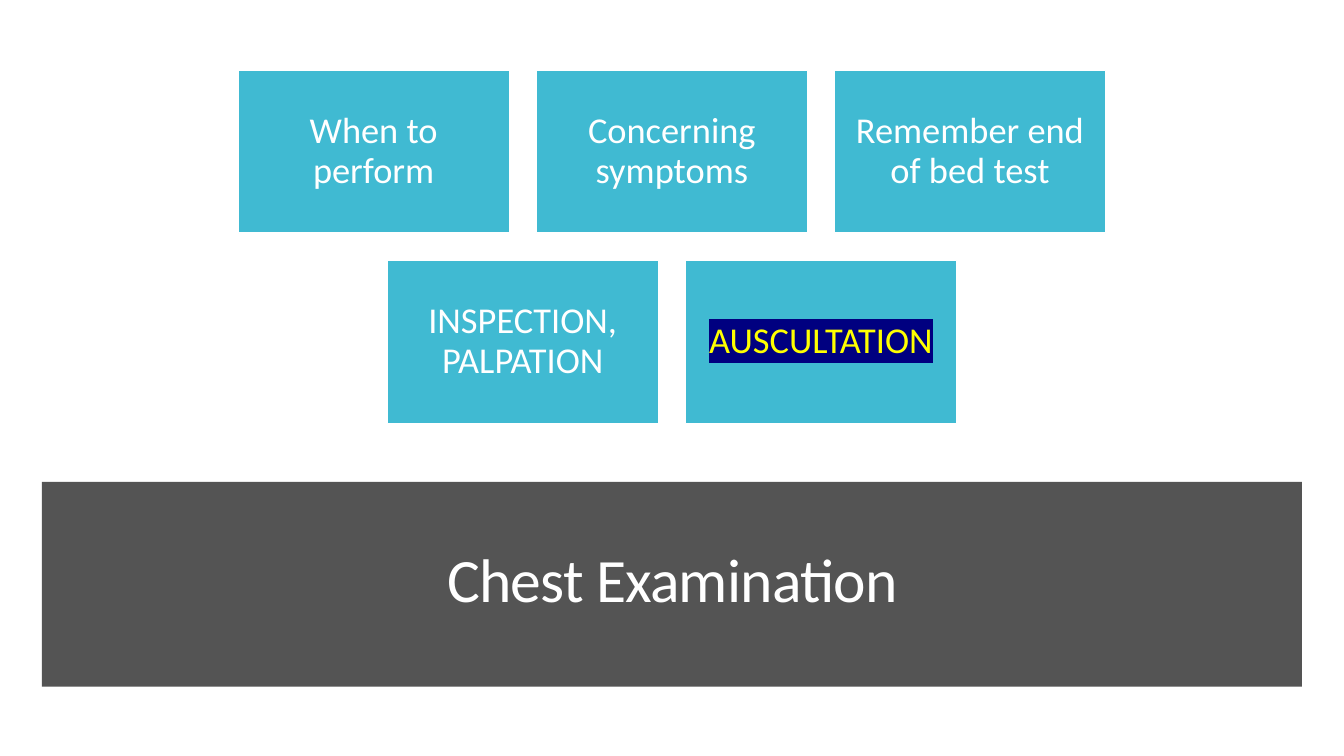
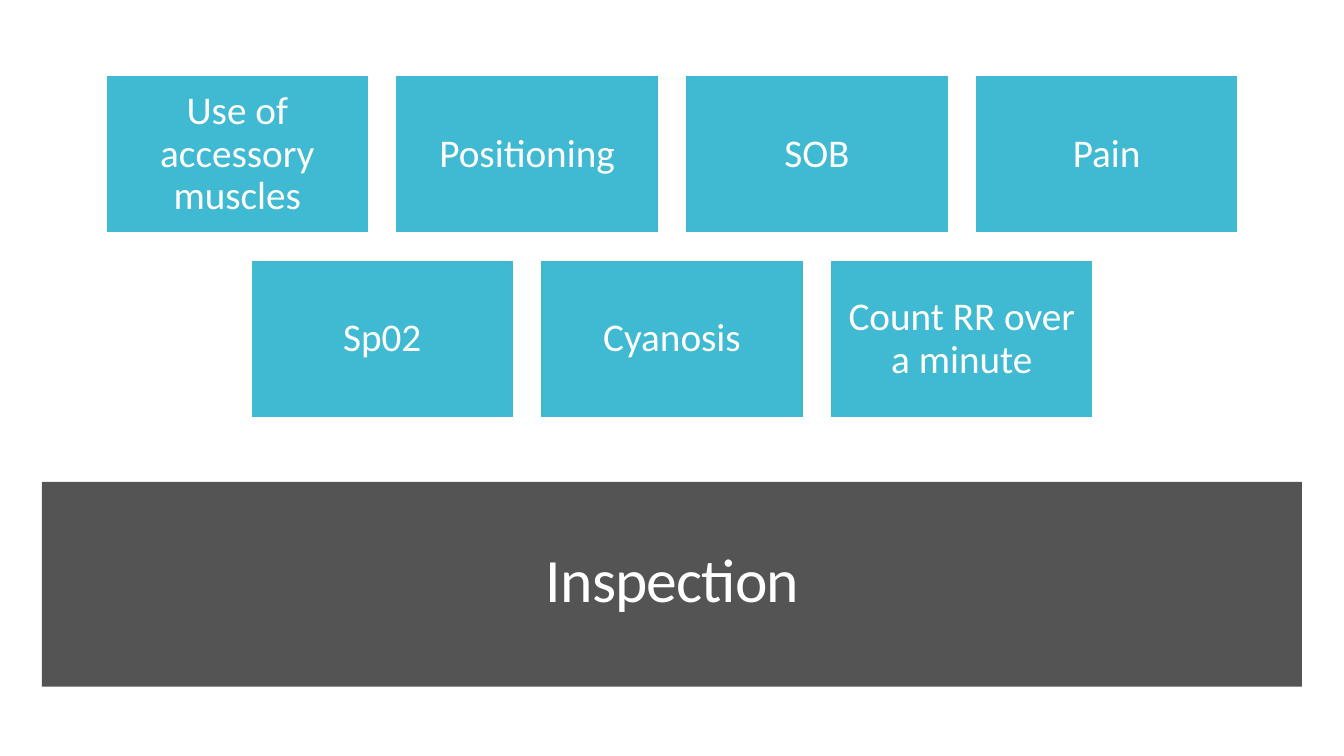
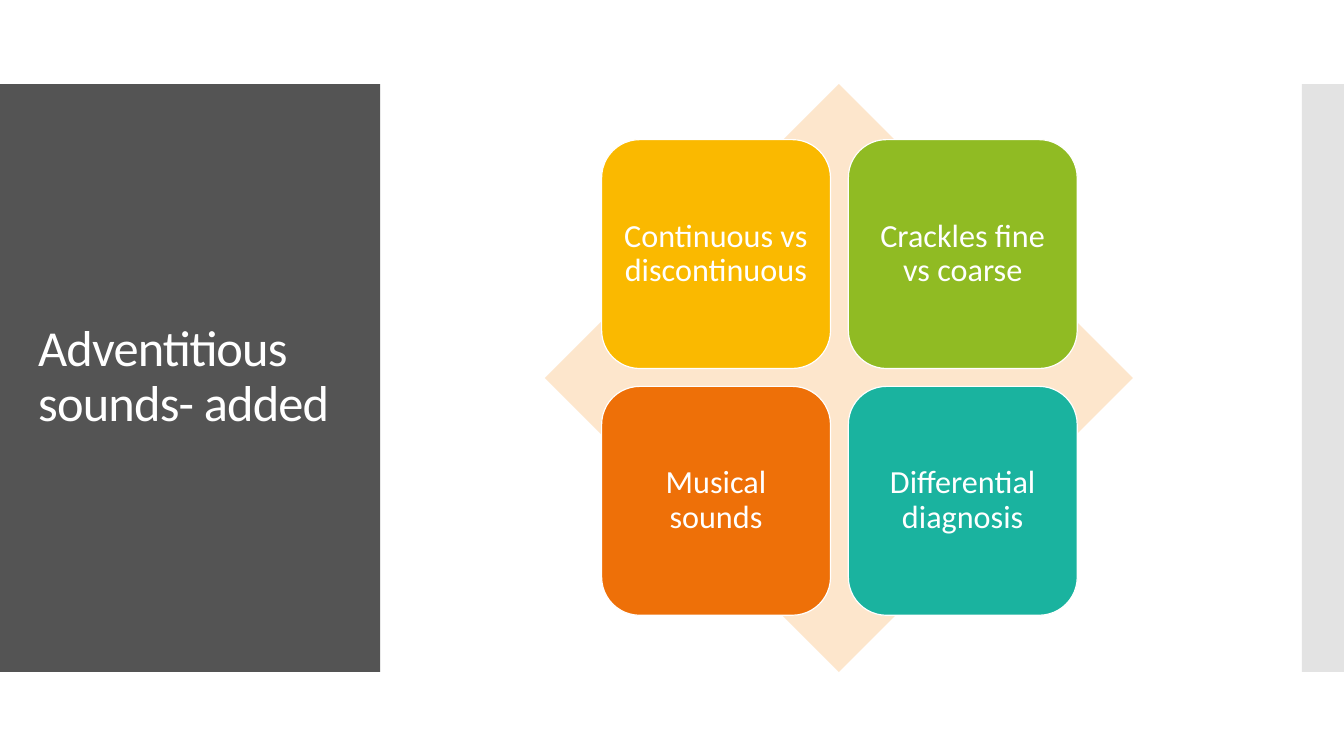
"""Build three chest examination slides."""
from dataclasses import dataclass

import lxml.etree
import pptx
import pptx.dml.color
import pptx.enum.shapes
import pptx.enum.text
import pptx.oxml.ns
import pptx.util

EMU_PER_PX = 9525
SLIDE_WIDTH, SLIDE_HEIGHT = 1280, 720
FONT = "Calibri"
WHITE, CHARCOAL, SKY = "FFFFFF", "545454", "40BAD2"
PEACH, EDGE_GREY = "FDE6CC", "E3E3E3"
YELLOW, NAVY = "FFFF00", "000080"
SHAPES = pptx.enum.shapes.MSO_SHAPE
ALIGN = pptx.enum.text.PP_ALIGN


@dataclass(frozen=True)
class Box:
    left: int
    top: int
    width: int
    height: int

    def emu(self) -> list[int]:
        return [px(n) for n in (self.left, self.top, self.width, self.height)]


@dataclass(frozen=True)
class Topic:
    text: str
    fill: str = SKY
    color: str = WHITE
    highlight: str | None = None


@dataclass(frozen=True)
class Grid:
    centre: int
    top: int
    width: int
    height: int
    gap: int
    size: int
    inset: int
    outline: SHAPES = SHAPES.RECTANGLE


BAND = Box(40, 459, 1200, 195)
BAND_TITLE = Box(59, 483, 1163, 143)
SIDE_PANEL = Box(0, 80, 362, 560)
SIDE_TITLE = Box(27, 118, 309, 483)
RIGHT_EDGE = Box(1240, 80, 40, 560)
DIAMOND = Box(519, 80, 560, 560)


def px(length: int) -> int:
    return pptx.util.Emu(length * EMU_PER_PX)


def rgb(value: str) -> pptx.dml.color.RGBColor:
    return pptx.dml.color.RGBColor.from_string(value)


def add_block(slide, box: Box, fill: str, outline=SHAPES.RECTANGLE, line: str | None = None):
    block = slide.shapes.add_shape(outline, *box.emu())
    block.shadow.inherit = False
    block.fill.solid()
    block.fill.fore_color.rgb = rgb(fill)
    if line:
        block.line.color.rgb = rgb(line)
        block.line.width = pptx.util.Pt(0.85)
    else:
        block.line.fill.background()
    return block


def write(frame, text: str, *, size: int, color: str = WHITE, align=ALIGN.CENTER,
          spacing: int = 0, highlight: str | None = None) -> None:
    frame.word_wrap = True
    frame.vertical_anchor = pptx.enum.text.MSO_ANCHOR.MIDDLE
    paragraph = frame.paragraphs[0]
    paragraph.alignment = align
    paragraph.line_spacing = 0.9
    run = paragraph.add_run()
    run.text = text
    run.font.size = pptx.util.Pt(size)
    run.font.color.rgb = rgb(color)
    properties = run._r.get_or_add_rPr()
    if spacing:
        properties.set("spc", str(spacing))
    if highlight:
        marker = lxml.etree.SubElement(properties, pptx.oxml.ns.qn("a:highlight"))
        lxml.etree.SubElement(marker, pptx.oxml.ns.qn("a:srgbClr"), val=highlight)
    run.font.name = FONT


def add_title(slide, box: Box, text: str, size: int, align) -> None:
    title = slide.shapes.add_textbox(*box.emu())
    write(title.text_frame, text, size=size, align=align, spacing=-60)


def add_topics(slide, rows: list[list[Topic]], grid: Grid) -> None:
    for row_number, row in enumerate(rows):
        row_width = len(row) * (grid.width + grid.gap) - grid.gap
        left = grid.centre - row_width // 2
        top = grid.top + row_number * (grid.height + grid.gap)
        for column, topic in enumerate(row):
            box = Box(left + column * (grid.width + grid.gap), top, grid.width, grid.height)
            tile = add_block(slide, box, topic.fill, grid.outline, WHITE)
            frame = tile.text_frame
            frame.margin_left = frame.margin_right = px(grid.inset)
            frame.margin_top = frame.margin_bottom = px(grid.inset)
            write(frame, topic.text, size=grid.size, color=topic.color, highlight=topic.highlight)


def add_blank(deck):
    return deck.slides.add_slide(deck.slide_layouts[6])


def build_band_slide(deck, title: str, rows: list[list[Topic]], grid: Grid) -> None:
    slide = add_blank(deck)
    add_block(slide, BAND, CHARCOAL)
    add_title(slide, BAND_TITLE, title, 44, ALIGN.CENTER)
    add_topics(slide, rows, grid)


def build_side_slide(deck, title: str, rows: list[list[Topic]], grid: Grid) -> None:
    slide = add_blank(deck)
    add_block(slide, RIGHT_EDGE, EDGE_GREY)
    add_block(slide, SIDE_PANEL, CHARCOAL)
    add_title(slide, SIDE_TITLE, title, 36, ALIGN.LEFT)
    add_block(slide, DIAMOND, PEACH, SHAPES.DIAMOND)
    add_topics(slide, rows, grid)


def main() -> None:
    deck = pptx.Presentation()
    deck.slide_width, deck.slide_height = px(SLIDE_WIDTH), px(SLIDE_HEIGHT)
    middle = SLIDE_WIDTH // 2
    build_band_slide(
        deck,
        "Chest Examination",
        [
            [Topic("When to perform"), Topic("Concerning symptoms"),
             Topic("Remember end of bed test")],
            [Topic("INSPECTION, PALPATION"),
             Topic("AUSCULTATION", color=YELLOW, highlight=NAVY)],
        ],
        Grid(middle, top=67, width=258, height=155, gap=26, size=26, inset=11),
    )
    build_band_slide(
        deck,
        "Inspection",
        [
            [Topic("Use of accessory muscles"), Topic("Positioning"), Topic("SOB"),
             Topic("Pain")],
            [Topic("Sp02"), Topic("Cyanosis"), Topic("Count RR over a minute")],
        ],
        Grid(middle, top=72, width=250, height=150, gap=26, size=28, inset=11),
    )
    build_side_slide(
        deck,
        "Adventitious sounds- added",
        [
            [Topic("Continuous vs discontinuous", "FAB900"),
             Topic("Crackles fine vs coarse", "90BB23")],
            [Topic("Musical sounds", "EE7008"), Topic("Differential diagnosis", "1AB39F")],
        ],
        Grid(DIAMOND.left + DIAMOND.width // 2, top=133, width=218, height=218, gap=17,
             size=23, inset=9, outline=SHAPES.ROUNDED_RECTANGLE),
    )
    deck.save("out.pptx")


if __name__ == "__main__":
    main()
